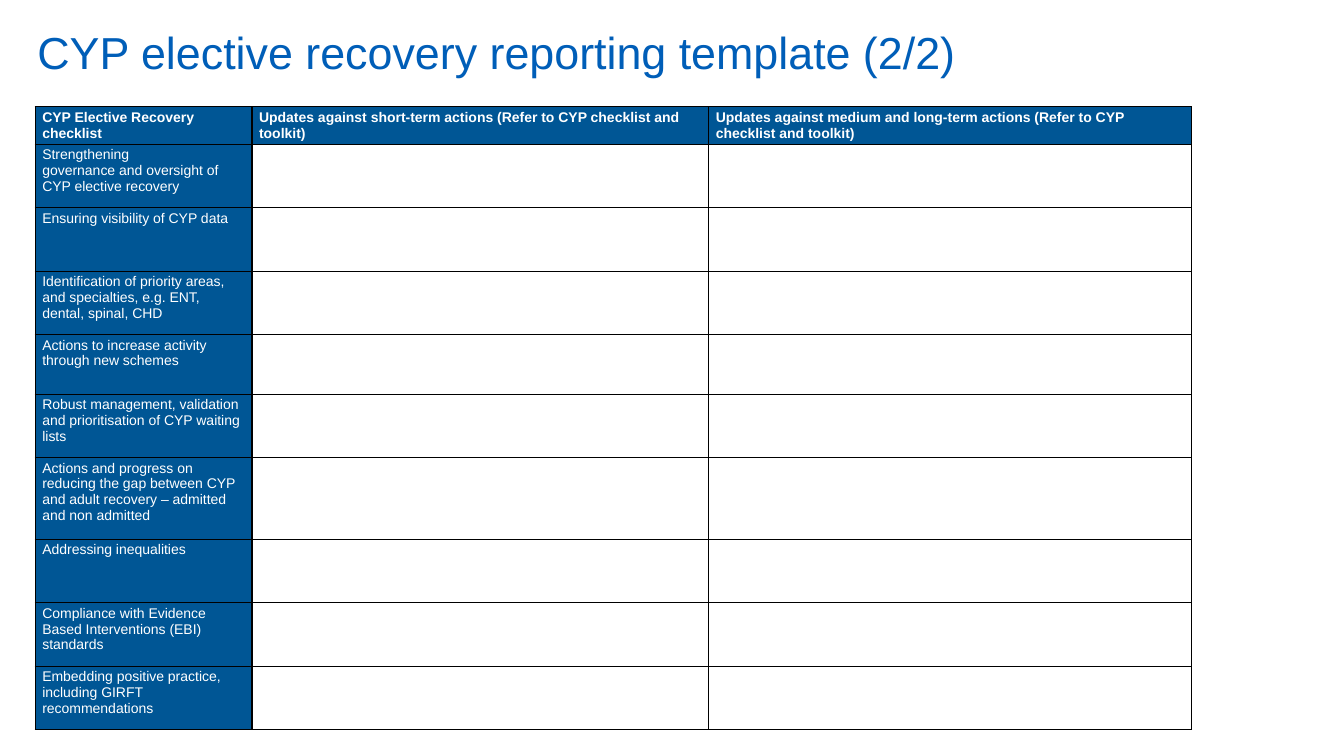
"""Build the CYP elective recovery reporting template slide."""
from dataclasses import dataclass

from lxml import etree
from pptx import Presentation
from pptx import util as u
from pptx.dml.color import RGBColor
from pptx.enum import text
from pptx.oxml import ns

TITLE_BLUE = RGBColor(0x00, 0x5E, 0xB8)
CELL_BLUE = RGBColor(0x00, 0x56, 0x95)
WHITE = RGBColor(0xFF, 0xFF, 0xFF)
BLACK = RGBColor(0x00, 0x00, 0x00)
FONT = "Arial"


@dataclass(frozen=True)
class Row:
    """One table row: its cell texts and its height in inches."""

    texts: tuple[str, ...]
    height: float = 0.63
    bold: bool = False


COLUMN_WIDTHS = (2.15, 4.53, 4.79)
ROWS = (
    Row(
        (
            "CYP Elective Recovery checklist",
            "Updates against short-term actions (Refer to CYP checklist and toolkit)",
            "Updates against medium and long-term actions (Refer to CYP checklist and toolkit)",
        ),
        height=0.37,
        bold=True,
    ),
    Row(("Strengthening\ngovernance and oversight of CYP elective recovery",)),
    Row(("Ensuring visibility of CYP data",)),
    Row(("Identification of priority areas, and specialties, e.g. ENT, dental, spinal, CHD",)),
    Row(("Actions to increase activity through new schemes",), height=0.59),
    Row(("Robust management, validation and prioritisation of CYP waiting lists",)),
    Row(
        ("Actions and progress on reducing the gap between CYP and adult recovery – admitted and non admitted",),
        height=0.81,
    ),
    Row(("Addressing inequalities",)),
    Row(("Compliance with Evidence Based Interventions (EBI) standards",)),
    Row(("Embedding positive practice, including GIRFT recommendations",)),
)


def add_borders(cell) -> None:
    """Draw a one-point black line on every side of a cell."""
    properties = cell._tc.get_or_add_tcPr()
    for side in ("L", "R", "T", "B"):
        line = etree.SubElement(properties, ns.qn(f"a:ln{side}"), w=str(u.Pt(1)))
        fill = etree.SubElement(line, ns.qn("a:solidFill"))
        etree.SubElement(fill, ns.qn("a:srgbClr"), val=str(BLACK))


def format_cell(cell, wording: str, bold: bool) -> None:
    """Fill a cell, blue where it holds wording and white where it is blank."""
    add_borders(cell)
    cell.fill.solid()
    cell.fill.fore_color.rgb = CELL_BLUE if wording else WHITE
    cell.margin_left = cell.margin_right = u.Inches(0.07)
    cell.margin_top = cell.margin_bottom = u.Inches(0.03)
    cell.text_frame.text = wording
    for paragraph in cell.text_frame.paragraphs:
        font = paragraph.font
        font.name, font.size, font.bold = FONT, u.Pt(10), bold
        font.color.rgb = WHITE


def add_title(slide, wording: str) -> None:
    """Place and format the title placeholder."""
    title = slide.shapes.title
    title.left, title.top = u.Inches(0.27), u.Inches(0.26)
    title.width, title.height = u.Inches(11.64), u.Inches(0.58)
    frame = title.text_frame
    frame.text = wording
    frame.word_wrap = True
    frame.auto_size = text.MSO_AUTO_SIZE.NONE
    frame.vertical_anchor = text.MSO_ANCHOR.MIDDLE
    paragraph = frame.paragraphs[0]
    paragraph.alignment = text.PP_ALIGN.LEFT
    paragraph.line_spacing = 0.9
    paragraph.font.name, paragraph.font.size = FONT, u.Pt(32)
    paragraph.font.color.rgb = TITLE_BLUE


def add_checklist(slide) -> None:
    """Add the checklist table."""
    table = slide.shapes.add_table(
        len(ROWS),
        len(COLUMN_WIDTHS),
        u.Inches(0.35),
        u.Inches(1.06),
        u.Inches(sum(COLUMN_WIDTHS)),
        u.Inches(sum(row.height for row in ROWS)),
    ).table
    table.horz_banding = False
    for column, width in zip(table.columns, COLUMN_WIDTHS):
        column.width = u.Inches(width)
    for table_row, row in zip(table.rows, ROWS):
        table_row.height = u.Inches(row.height)
        for index, cell in enumerate(table_row.cells):
            wording = row.texts[index] if index < len(row.texts) else ""
            format_cell(cell, wording, row.bold)


def main() -> None:
    """Build and save the deck."""
    deck = Presentation()
    deck.slide_width, deck.slide_height = u.Inches(13.33), u.Inches(7.5)
    slide = deck.slides.add_slide(deck.slide_layouts.get_by_name("Title Only"))
    add_title(slide, "CYP elective recovery reporting template (2/2)")
    add_checklist(slide)
    deck.save("out.pptx")


if __name__ == "__main__":
    main()
